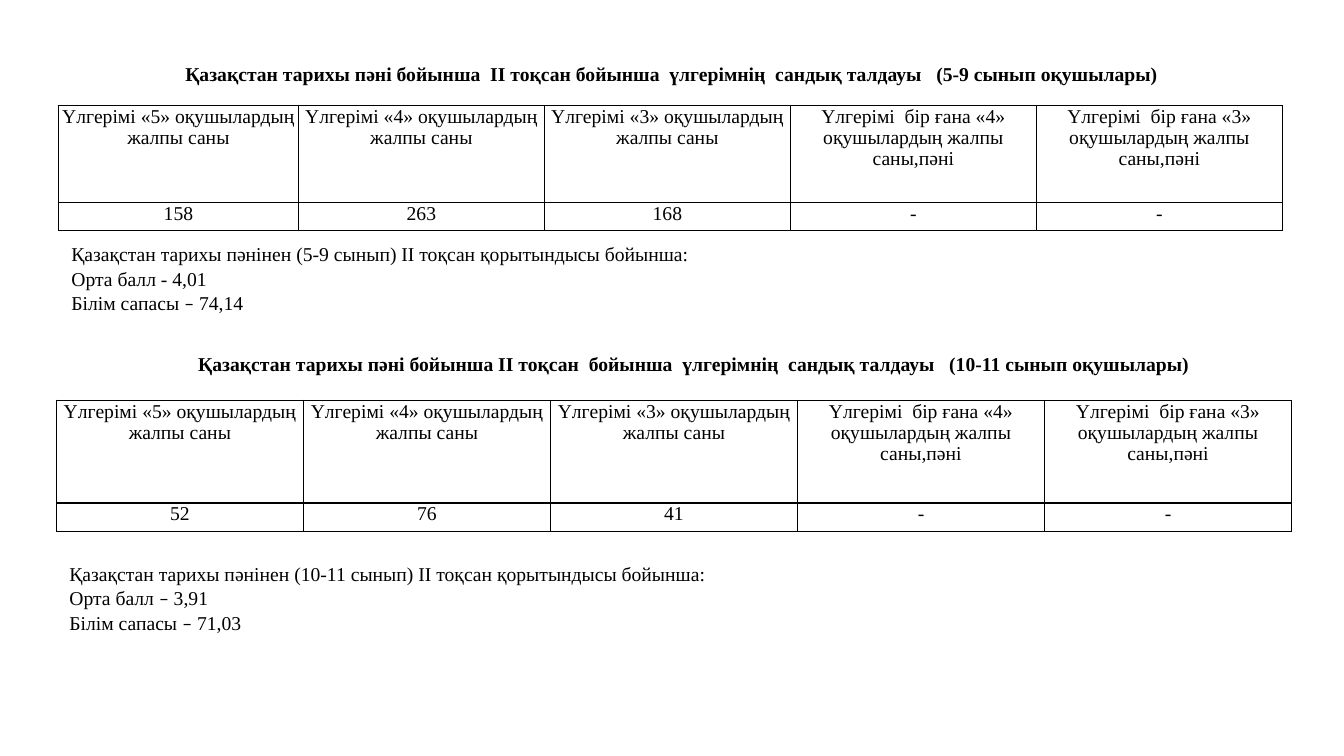
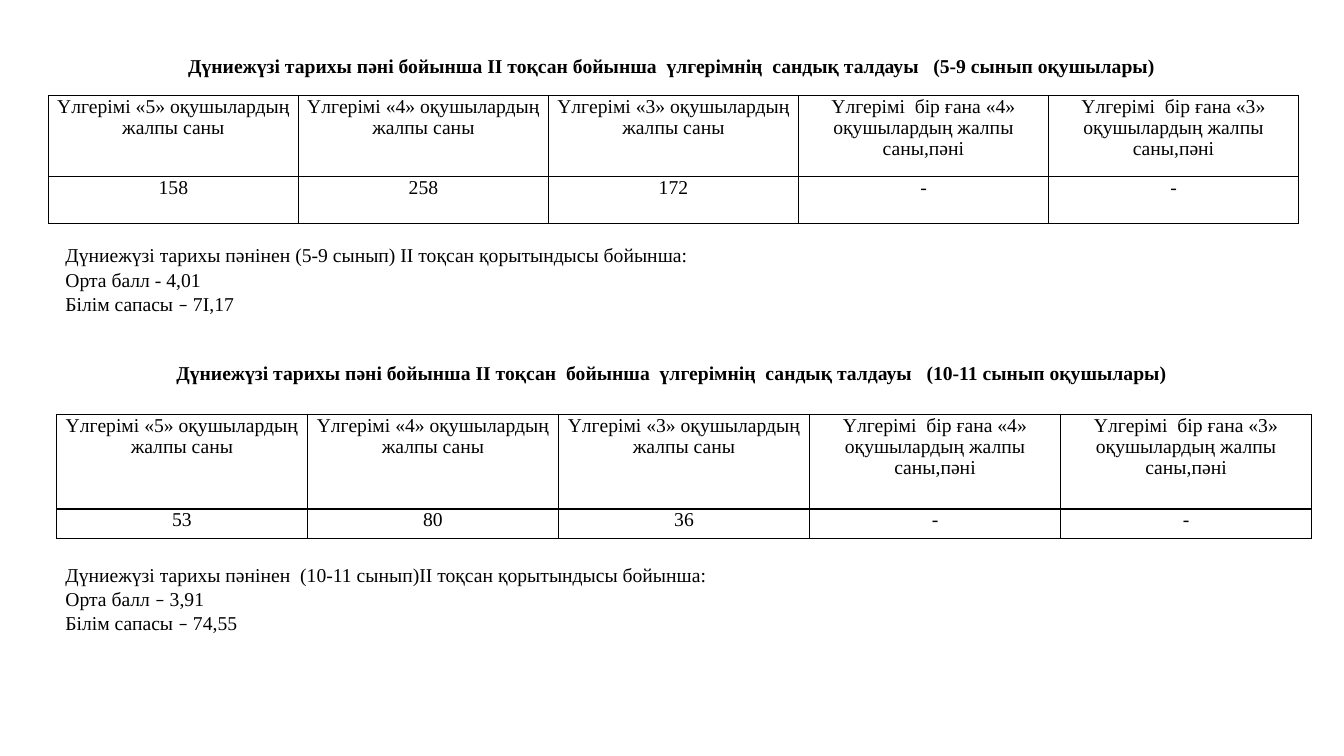
from dataclasses import dataclass

from lxml.etree import SubElement
from pptx import Presentation
from pptx.dml.color import RGBColor
from pptx.enum.text import MSO_ANCHOR, PP_ALIGN
from pptx.oxml import parse_xml
from pptx.oxml.ns import nsdecls, qn
from pptx.util import Inches, Pt

BLACK = RGBColor(0, 0, 0)
BODY_FONT = "Times New Roman"
DASH_FONT = "Calibri"
DASH = "–"
TEXT_SIZE = Pt(14)
BORDER_WIDTH = Pt(1)
TITLE_HEIGHT = 0.34
SUMMARY_HEIGHT = 0.81
HEADERS = [f"Үлгерімі «{grade}» оқушылардың жалпы саны" for grade in (5, 4, 3)] + [
    f"Үлгерімі  бір ғана «{grade}» оқушылардың жалпы саны,пәні" for grade in (4, 3)
]


@dataclass
class Section:
    title: str
    title_box: tuple
    counts: tuple
    table_corner: tuple
    columns: tuple
    rows: tuple
    summary: tuple
    summary_box: tuple


KAZAKHSTAN_HISTORY = [
    Section(
        "Қазақстан тарихы пәні бойынша  ІІ тоқсан бойынша  үлгерімнің  сандық талдауы   (5-9 сынып оқушылары)",
        (0, 0.56, 13.33),
        ("158", "263", "168", "-", "-"),
        (0.58, 1.05), (2.38,) + (2.44,) * 4, (0.96, 0.28),
        ("Қазақстан тарихы пәнінен (5-9 сынып) ІІ тоқсан қорытындысы бойынша:",
         "Орта балл - 4,01", "Білім сапасы – 74,14"),
        (0.61, 2.35, 12.11),
    ),
    Section(
        "Қазақстан тарихы пәні бойынша ІІ тоқсан  бойынша  үлгерімнің  сандық талдауы   (10-11 сынып оқушылары)",
        (0.44, 3.44, 12.89),
        ("52", "76", "41", "-", "-"),
        (0.56, 3.97), (2.45,) * 5, (1.02, 0.28),
        ("Қазақстан тарихы пәнінен (10-11 сынып) ІІ тоқсан қорытындысы бойынша:",
         "Орта балл – 3,91", "Білім сапасы – 71,03"),
        (0.59, 5.52, 12.74),
    ),
]

WORLD_HISTORY = [
    Section(
        "Дүниежүзі тарихы пәні бойынша ІІ тоқсан бойынша  үлгерімнің  сандық талдауы   (5-9 сынып оқушылары)",
        (0, 0.48, 13.33),
        ("158", "258", "172", "-", "-"),
        (0.48, 0.95), (2.48,) * 5, (0.8, 0.47),
        ("Дүниежүзі тарихы пәнінен (5-9 сынып) ІІ тоқсан қорытындысы бойынша:",
         "Орта балл - 4,01", "Білім сапасы – 7І,17"),
        (0.55, 2.36, 12.35),
    ),
    Section(
        "Дүниежүзі тарихы пәні бойынша ІІ тоқсан  бойынша  үлгерімнің  сандық талдауы   (10-11 сынып оқушылары)",
        (0, 3.53, 13.33),
        ("53", "80", "36", "-", "-"),
        (0.56, 4.11), (2.49,) * 5, (0.94, 0.29),
        ("Дүниежүзі тарихы пәнінен  (10-11 сынып)ІІ тоқсан қорытындысы бойынша:",
         "Орта балл – 3,91", "Білім сапасы – 74,55"),
        (0.55, 5.53, 12.52),
    ),
]


def write_paragraph(paragraph, text, align, line_spacing, bold=False):
    paragraph.alignment = align
    paragraph.line_spacing = line_spacing
    paragraph.font.name = BODY_FONT
    paragraph.font.size = TEXT_SIZE
    paragraph.font.bold = bold
    paragraph.font.color.rgb = BLACK
    before, dash, after = text.partition(DASH)
    for part in filter(None, (before, dash, after)):
        run = paragraph.add_run()
        run.text = part
        if part == DASH:
            run.font.name = DASH_FONT


def add_lines(slide, lines, box, height, align, line_spacing=1.0, bold=False):
    left, top, width = box
    frame = slide.shapes.add_textbox(
        Inches(left), Inches(top), Inches(width), Inches(height)
    ).text_frame
    frame.word_wrap = True
    frame.vertical_anchor = MSO_ANCHOR.MIDDLE
    for index, line in enumerate(lines):
        paragraph = frame.add_paragraph() if index else frame.paragraphs[0]
        write_paragraph(paragraph, line, align, line_spacing, bold)


def set_borders(cell):
    properties = cell._tc.get_or_add_tcPr()
    for index, side in enumerate(("lnL", "lnR", "lnT", "lnB")):
        border = parse_xml(f'<a:{side} {nsdecls("a")} w="{BORDER_WIDTH}"/>')
        fill = SubElement(border, qn("a:solidFill"))
        SubElement(fill, qn("a:srgbClr"), val=str(BLACK))
        properties.insert(index, border)


def fill_cell(cell, text):
    cell.margin_left = cell.margin_right = cell.margin_top = Inches(0.01)
    cell.margin_bottom = 0
    cell.fill.background()
    set_borders(cell)
    write_paragraph(cell.text_frame.paragraphs[0], text, PP_ALIGN.CENTER, 0.97)


def add_grade_table(slide, section):
    left, top = section.table_corner
    table = slide.shapes.add_table(
        len(section.rows), len(section.columns), Inches(left), Inches(top),
        Inches(sum(section.columns)), Inches(sum(section.rows)),
    ).table
    table.first_row = table.horz_banding = False
    for column, width in zip(table.columns, section.columns):
        column.width = Inches(width)
    for row, height, texts in zip(table.rows, section.rows, (HEADERS, section.counts)):
        row.height = Inches(height)
        for cell, text in zip(row.cells, texts):
            fill_cell(cell, text)


def add_section(slide, section):
    add_lines(slide, [section.title], section.title_box, TITLE_HEIGHT,
              PP_ALIGN.CENTER, bold=True)
    add_grade_table(slide, section)
    add_lines(slide, section.summary, section.summary_box, SUMMARY_HEIGHT,
              PP_ALIGN.LEFT, line_spacing=1.04)


def main():
    presentation = Presentation()
    presentation.slide_width = Inches(13.33)
    presentation.slide_height = Inches(7.5)
    for sections in (KAZAKHSTAN_HISTORY, WORLD_HISTORY):
        slide = presentation.slides.add_slide(presentation.slide_layouts[6])
        for section in sections:
            add_section(slide, section)
    presentation.save("out.pptx")


if __name__ == "__main__":
    main()
